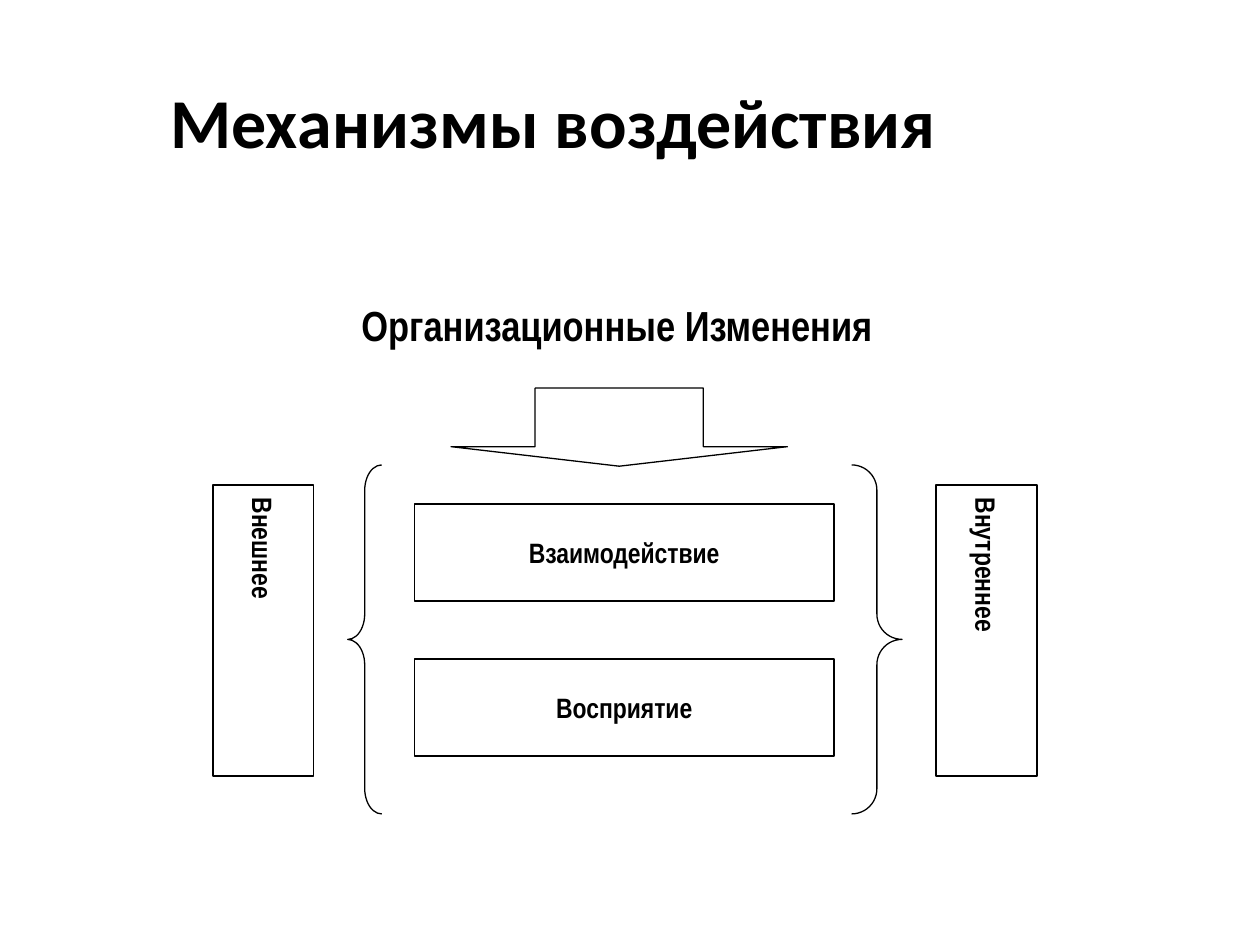
"""Build the slide on mechanisms of influence in organisational change."""
from pptx import Presentation
from pptx.dml.color import RGBColor
from pptx.enum.shapes import MSO_SHAPE as Shape
from pptx.enum.text import MSO_ANCHOR as Anchor, MSO_AUTO_SIZE as AutoSize, PP_ALIGN as Align
from pptx.util import Inches, Pt

BLACK = RGBColor(0, 0, 0)
WHITE = RGBColor(255, 255, 255)

TITLE = "Механизмы воздействия"
HEADING = "Организационные Изменения"
PROCESSES = ["Взаимодействие", "Восприятие"]
SIDES = [("Внешнее", 1.69), ("Внутреннее", 7.43)]
BRACES = [(Shape.LEFT_BRACE, 2.76, 0.27, 0.748), (Shape.RIGHT_BRACE, 6.76, 0.4, 0.501)]
PROCESS_TOP, PROCESS_STEP = 4, 1.23


def write(frame, text, size, font, align):
    frame.vertical_anchor = Anchor.MIDDLE
    para = frame.paragraphs[0]
    para.alignment = align
    span = para.add_run()
    span.text = text
    span.font.size = Pt(size)
    span.font.name = font
    span.font.bold = True
    span.font.color.rgb = BLACK


def add_outline(shapes, kind, area, filled=True):
    shape = shapes.add_shape(kind, *map(Inches, area))
    shape.shadow.inherit = False
    if filled:
        shape.fill.solid()
        shape.fill.fore_color.rgb = WHITE
    else:
        shape.fill.background()
    shape.line.color.rgb = BLACK
    shape.line.width = Pt(0.75)
    return shape


def add_label(shapes, text, area):
    box = add_outline(shapes, Shape.RECTANGLE, area)
    box.text_frame.word_wrap = False
    write(box.text_frame, text, 16, "Arial Narrow", Align.CENTER)
    return box


def main():
    deck = Presentation()
    deck.slide_width, deck.slide_height = Inches(10), Inches(7.5)
    page = deck.slides.add_slide(deck.slide_layouts[5])

    title = page.shapes.title
    title.left, title.top, title.width, title.height = map(Inches, (1.25, 0.33, 8.75, 1.33))
    title.text_frame.auto_size = AutoSize.NONE
    write(title.text_frame, TITLE, 40, "Calibri", Align.LEFT)
    title.text_frame.paragraphs[0].line_spacing = 0.9

    diagram = page.shapes.add_group_shape().shapes
    for row, text in enumerate(PROCESSES):
        add_label(diagram, text, (3.29, PROCESS_TOP + row * PROCESS_STEP, 3.33, 0.77))
    arrow = add_outline(diagram, Shape.DOWN_ARROW, (3.58, 3.08, 2.67, 0.62))
    arrow.adjustments[0], arrow.adjustments[1] = 0.5, 0.25
    for kind, left, width, curve in BRACES:
        brace = add_outline(diagram, kind, (left, 3.69, width, 2.77), filled=False)
        brace.adjustments[0], brace.adjustments[1] = curve, 0.5
    for text, left in SIDES:
        box = add_label(diagram, text, (left, 3.85, 0.8, 2.31))
        box._element.txBody.bodyPr.set("vert", "eaVert")

    heading = page.shapes.add_textbox(*map(Inches, (2.77, 2.33, 4.28, 0.5))).text_frame
    heading.word_wrap = False
    heading.auto_size = AutoSize.SHAPE_TO_FIT_TEXT
    write(heading, HEADING, 24, "Arial Narrow", Align.LEFT)

    deck.save("out.pptx")


if __name__ == "__main__":
    main()
